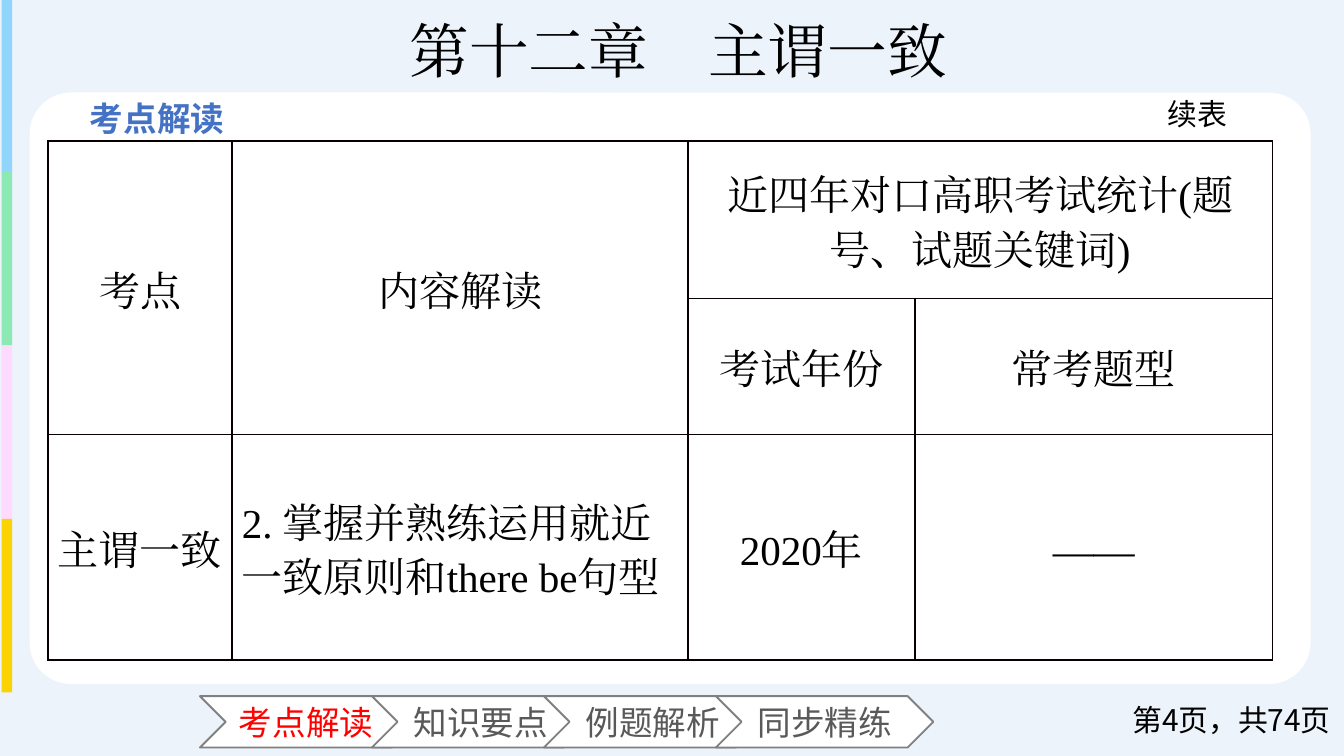
from lxml.etree import SubElement
from pptx import Presentation
from pptx.dml.color import RGBColor
from pptx.enum.lang import MSO_LANGUAGE_ID as Lang
from pptx.enum.shapes import MSO_SHAPE as Shape
from pptx.enum.text import MSO_ANCHOR as Anchor, PP_ALIGN as Align
from pptx.oxml.ns import qn
from pptx.util import Cm, Pt

COLORS = {
    "backdrop": "ECF3FB", "panel": "FFFFFF", "heading": "4472C4",
    "active": "FF0000", "inactive": "595959", "outline": "808080",
    "text": "000000", "border": "080000",
}
STRIPS = ["91D5FD", "8CE9B4", "FEDAFE", "FBD302"]
SANS, SERIF = "Noto Sans CJK SC", "Times New Roman"


def write(frame, text, size, font, color="text", align=Align.LEFT, bold=False):
    """Put one styled run in the first paragraph and return the paragraph."""
    frame.word_wrap = True
    paragraph = frame.paragraphs[0]
    paragraph.alignment = align
    run = paragraph.add_run()
    run.text = text
    run.font.size = Pt(size)
    run.font.bold = bold
    run.font.name = font
    run.font.language_id = Lang.SIMPLIFIED_CHINESE
    run.font.color.rgb = RGBColor.from_string(COLORS[color])
    SubElement(run.font._element, qn("a:ea"), typeface=font)
    return paragraph


def add_block(kind, left, top, width, height, fill):
    """Add a shadowless, borderless filled shape; lengths in cm."""
    block = slide.shapes.add_shape(kind, Cm(left), Cm(top), Cm(width), Cm(height))
    block.shadow.inherit = False
    block.fill.solid()
    block.fill.fore_color.rgb = RGBColor.from_string(fill)
    block.line.fill.background()
    return block


prs = Presentation()
prs.slide_width, prs.slide_height = Cm(25.4), Cm(14.29)
slide = prs.slides.add_slide(prs.slide_layouts[6])

# Backdrop, coloured edge and white panel
add_block(Shape.RECTANGLE, 0, 0, 25.4, 14.29, COLORS["backdrop"])
for i, strip_color in enumerate(STRIPS):
    add_block(Shape.RECTANGLE, 0.03, -0.03 + 3.28 * i, 0.2, 3.28, strip_color)
panel = add_block(Shape.ROUNDED_RECTANGLE, 0.56, 1.75, 24.21, 11.18, COLORS["panel"])
panel.adjustments[0] = 0.07

# Navigation chevrons
for i, section in enumerate(["考点解读", "知识要点", "例题解析", "同步精练"]):
    chevron = add_block(Shape.CHEVRON, 3.78 + 3.25 * i, 13.16, 4.11, 0.97, COLORS["panel"])
    chevron.line.color.rgb = RGBColor.from_string(COLORS["outline"])
    chevron.line.width = Pt(1)
    chevron.text_frame.vertical_anchor = Anchor.MIDDLE
    write(chevron.text_frame, section, 18, SANS,
          "inactive" if i else "active", Align.CENTER if i else Align.JUSTIFY)

# Title, heading, page number and continuation mark
for box, text, size, font, color, align, anchor, bold in [
    ((4.47, 0.13, 16.71, 1.63), "第十二章　主谓一致", 32, SERIF, "text", Align.CENTER, Anchor.TOP, False),
    ((1.45, 1.73, 3.68, 0.86), "考点解读", 18, SANS, "heading", Align.LEFT, Anchor.TOP, True),
    ((20.24, 13.23, 5.16, 0.76), "第4页，共74页", 16, SANS, "text", Align.RIGHT, Anchor.MIDDLE, False),
    ((21.82, 1.68, 1.96, 0.69), "续表", 16, SANS, "text", Align.LEFT, Anchor.TOP, False),
]:
    frame = slide.shapes.add_textbox(*map(Cm, box)).text_frame
    frame.vertical_anchor = anchor
    write(frame, text, size, font, color, align, bold)

# Exam-point table
col_widths = [3.48, 8.61, 4.29, 6.76]
row_heights = [2.97, 2.57, 4.27]
rows = [
    ["考点", "内容解读", "近四年对口高职考试统计(题号、试题关键词)", ""],
    ["", "", "考试年份", "常考题型"],
    ["主谓一致", "2. 掌握并熟练运用就近一致原则和there be句型", "2020年", "——"],
]
exam_points = slide.shapes.add_table(
    3, 4, Cm(0.91), Cm(2.67), Cm(sum(col_widths)), Cm(sum(row_heights))).table
exam_points.first_row = exam_points.horz_banding = False
for column, width in zip(exam_points.columns, col_widths):
    column.width = Cm(width)
for row, height in zip(exam_points.rows, row_heights):
    row.height = Cm(height)
for first, last in [((0, 0), (1, 0)), ((0, 1), (1, 1)), ((0, 2), (0, 3))]:
    exam_points.cell(*first).merge(exam_points.cell(*last))

for r, texts in enumerate(rows):
    for c, text in enumerate(texts):
        cell = exam_points.cell(r, c)
        is_entry = r == 2 and c < 2
        cell.vertical_anchor = Anchor.MIDDLE
        cell.margin_left = cell.margin_right = Cm(0.18 if is_entry else 0.48)
        cell.margin_top = cell.margin_bottom = Cm(0 if is_entry else 0.3)
        properties = cell._tc.get_or_add_tcPr()
        for side in ("lnL", "lnR", "lnT", "lnB"):
            border = SubElement(properties, qn(f"a:{side}"), w=str(Pt(1)))
            SubElement(SubElement(border, qn("a:solidFill")),
                       qn("a:srgbClr"), val=COLORS["border"])
        cell.fill.background()
        if text:
            paragraph = write(cell.text_frame, text, 22, SERIF,
                              align=Align.LEFT if is_entry else Align.CENTER)
            paragraph.line_spacing = 1.2

prs.save("out.pptx")
